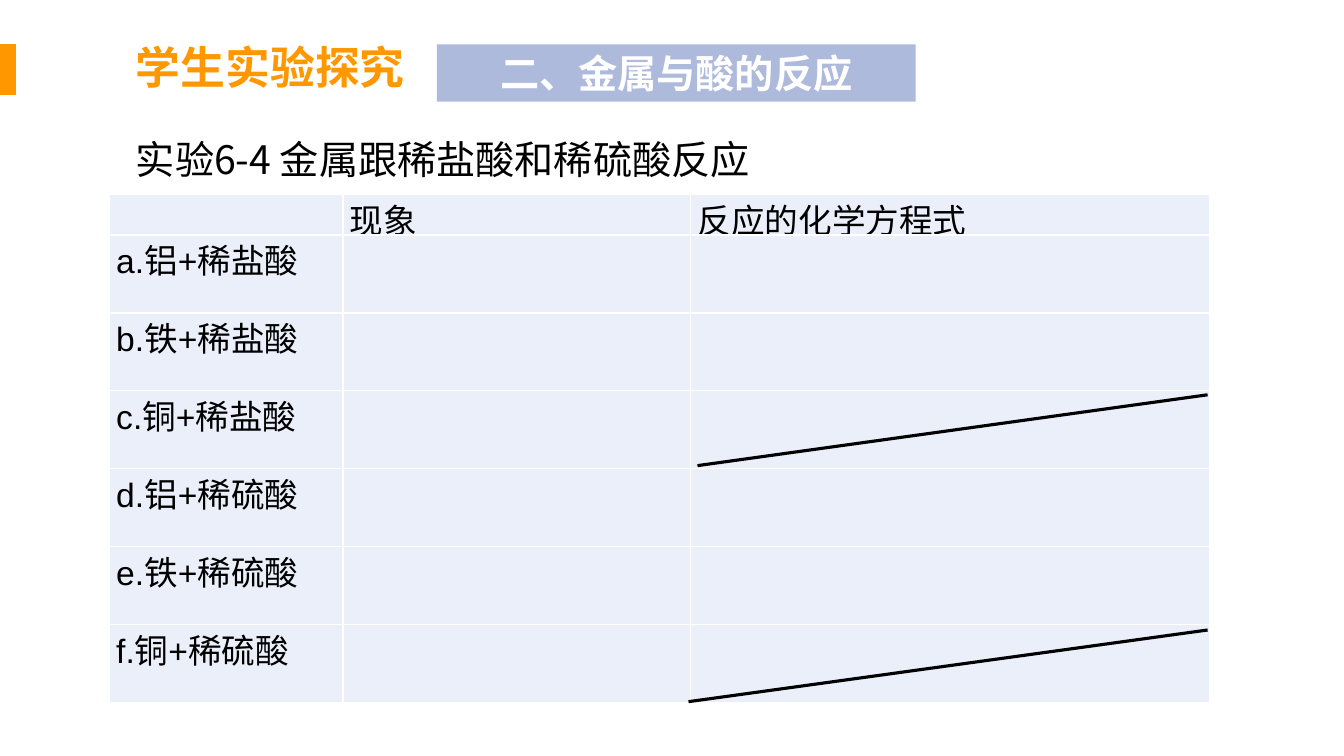
from dataclasses import dataclass
from typing import NamedTuple

from lxml.etree import SubElement
from pptx import Presentation
from pptx.dml.color import RGBColor
from pptx.enum.shapes import MSO_CONNECTOR, MSO_SHAPE
from pptx.enum.text import MSO_ANCHOR, PP_ALIGN
from pptx.oxml.ns import qn
from pptx.util import Pt


@dataclass(frozen=True)
class Theme:
    """Colours, fonts and type sizes of the slide."""

    accent: RGBColor = RGBColor(0xFF, 0x98, 0x00)
    band: RGBColor = RGBColor(0xAE, 0xBA, 0xDC)
    cell: RGBColor = RGBColor(0xEA, 0xEF, 0xFA)
    ink: RGBColor = RGBColor(0, 0, 0)
    white: RGBColor = RGBColor(0xFF, 0xFF, 0xFF)
    heading_font: str = "Noto Sans CJK SC"
    table_font: str = "Arial"
    title_size: int = 32
    heading_size: int = 28
    table_size: int = 24


class Area(NamedTuple):
    """A rectangle in points."""

    left: float
    top: float
    width: float
    height: float


class Stroke(NamedTuple):
    """A straight line between two points."""

    start: tuple[float, float]
    end: tuple[float, float]


THEME = Theme()
COLUMNS = (167, 248.4, 370.6)
HEADER_HEIGHT, ROW_HEIGHT = 28.8, 55.7
HEADERS = ("", "现象", "反应的化学方程式")
ACIDS = ("稀盐酸", "稀硫酸")
METALS = ("铝", "铁", "铜")
REACTIONS = [f"{metal}+{acid}" for acid in ACIDS for metal in METALS]
LABELS = [f"{letter}.{reaction}" for letter, reaction in zip("abcdef", REACTIONS)]
STROKES = (
    Stroke((491.8, 501.2), (862.6, 450)),
    Stroke((498.2, 332.6), (862.6, 282)),
)


def points(area: Area) -> list[Pt]:
    """Turn an area into lengths."""
    return [Pt(value) for value in area]


def write(frame, text: str, *, size: int, color: RGBColor, font: str = THEME.heading_font,
          bold: bool = False, align: PP_ALIGN = PP_ALIGN.LEFT, spacing: float = 1.0) -> None:
    """Fill a text frame with one formatted paragraph."""
    para = frame.paragraphs[0]
    para.alignment = align
    para.line_spacing = spacing
    span = para.add_run()
    span.text = text
    span.font.size = Pt(size)
    span.font.bold = bold
    span.font.color.rgb = color
    span.font.name = font
    if font == THEME.heading_font:
        SubElement(span.font._element, qn("a:ea"), typeface=font)


def add_block(page, area: Area, kind: MSO_SHAPE, color: RGBColor):
    """Draw a filled shape without outline or shadow."""
    block = page.shapes.add_shape(kind, *points(area))
    block.shadow.inherit = False
    block.fill.solid()
    block.fill.fore_color.rgb = color
    block.line.fill.background()
    return block


def add_text(page, area: Area, text: str, *, wrap: bool = True, **style) -> None:
    """Add a text box with one paragraph."""
    box = page.shapes.add_textbox(*points(area))
    box.text_frame.word_wrap = wrap
    write(box.text_frame, text, **style)


def style_cell(cell, text: str) -> None:
    """Give a cell its fill, white borders and text."""
    properties = cell._tc.get_or_add_tcPr()
    for side in ("a:lnL", "a:lnR", "a:lnT", "a:lnB"):
        border = SubElement(properties, qn(side), w=str(Pt(1)))
        fill = SubElement(border, qn("a:solidFill"))
        SubElement(fill, qn("a:srgbClr"), val=str(THEME.white))
    cell.fill.solid()
    cell.fill.fore_color.rgb = THEME.cell
    if text:
        cell.margin_left = cell.margin_right = Pt(5)
        cell.margin_top = cell.margin_bottom = Pt(0)
        write(cell.text_frame, text, size=THEME.table_size, color=THEME.ink,
              font=THEME.table_font, align=PP_ALIGN.JUSTIFY)


def add_results_table(page) -> None:
    """Build the table of reactions."""
    rows = [HEADERS] + [(label, "", "") for label in LABELS]
    area = Area(78, 139, sum(COLUMNS), HEADER_HEIGHT + len(LABELS) * ROW_HEIGHT)
    table = page.shapes.add_table(len(rows), len(COLUMNS), *points(area)).table
    for column, width in zip(table.columns, COLUMNS):
        column.width = Pt(width)
    for index, texts in enumerate(rows):
        table.rows[index].height = Pt(ROW_HEIGHT if index else HEADER_HEIGHT)
        for cell, text in zip(table.rows[index].cells, texts):
            style_cell(cell, text)


def add_stroke(page, stroke: Stroke) -> None:
    """Draw a black line through an unused cell."""
    ends = [Pt(value) for value in (*stroke.start, *stroke.end)]
    line = page.shapes.add_connector(MSO_CONNECTOR.STRAIGHT, *ends)
    line.line.color.rgb = THEME.ink
    line.line.width = Pt(2.25)
    SubElement(line._element.spPr, qn("a:effectLst"))


def main() -> None:
    """Build and save the slide."""
    deck = Presentation()
    deck.slide_width, deck.slide_height = Pt(960), Pt(540)
    page = deck.slides.add_slide(deck.slide_layouts[6])
    add_block(page, Area(-0.7, 31.7, 12.2, 36), MSO_SHAPE.FLOWCHART_PROCESS, THEME.accent)
    band = add_block(page, Area(312, 31.7, 342, 41), MSO_SHAPE.RECTANGLE, THEME.band)
    band.text_frame.vertical_anchor = MSO_ANCHOR.MIDDLE
    write(band.text_frame, "二、金属与酸的反应", size=THEME.heading_size,
          color=THEME.white, bold=True, align=PP_ALIGN.CENTER)
    add_text(page, Area(90, 59.8, 612, 62.6), "实验6-4 金属跟稀盐酸和稀硫酸反应",
             size=THEME.heading_size, color=THEME.ink, spacing=2)
    add_text(page, Area(90, 24.5, 208, 46), "学生实验探究", wrap=False,
             size=THEME.title_size, color=THEME.accent, bold=True)
    add_results_table(page)
    for stroke in STROKES:
        add_stroke(page, stroke)
    deck.save("out.pptx")


if __name__ == "__main__":
    main()
